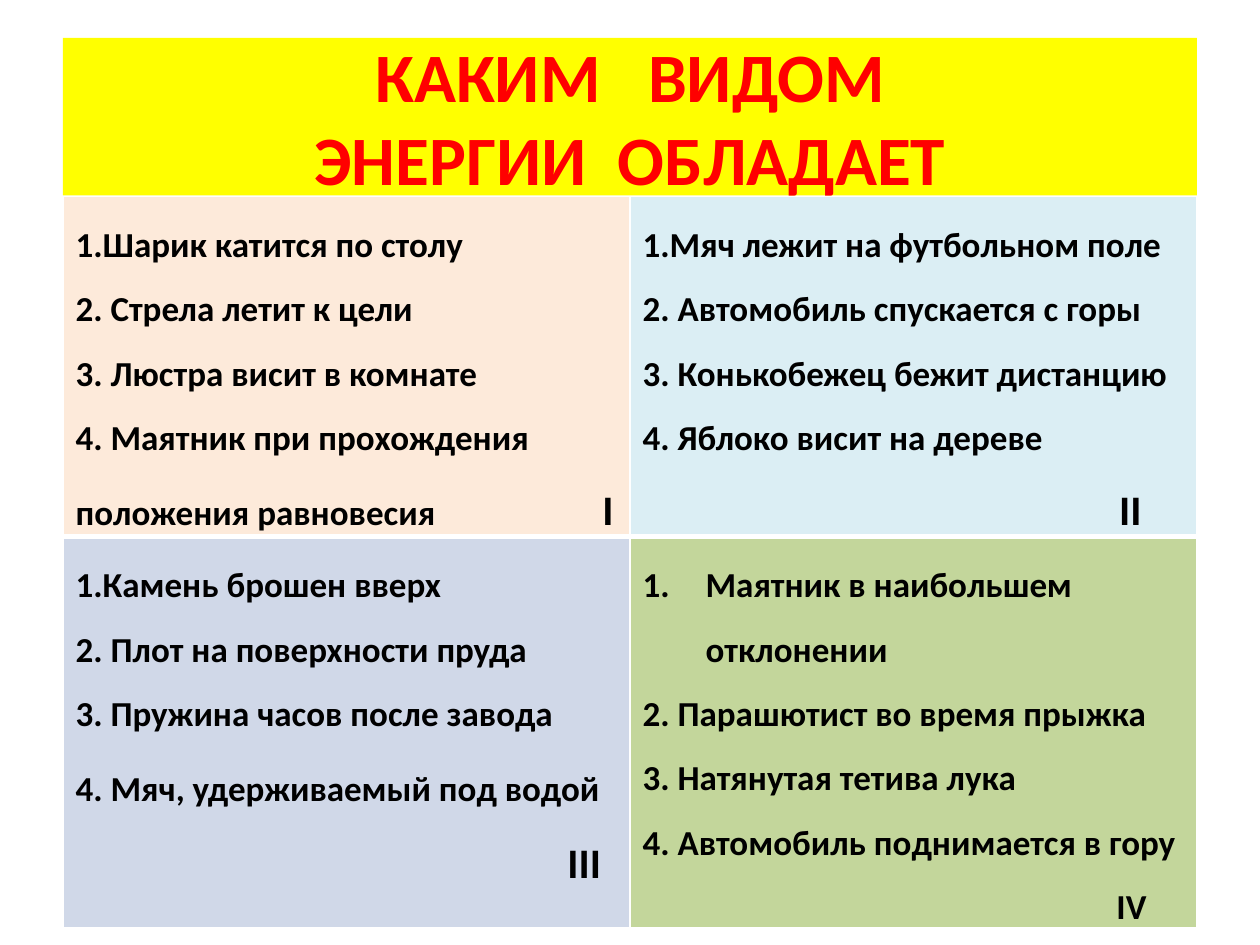
from lxml.etree import SubElement
from pptx import Presentation
from pptx.dml.color import RGBColor
from pptx.enum.text import MSO_ANCHOR, PP_ALIGN
from pptx.oxml import parse_xml
from pptx.oxml.ns import nsdecls, qn
from pptx.util import Inches, Pt

COLORS = {
    "title_fill": "FFFF00", "title": "FF0000", "text": "000000", "border": "FFFFFF",
    "I": "FDEADA", "II": "DBEEF4", "III": "D0D8E8", "IV": "C3D69B",
}


def add_run(p, text, size=20, color="text", spacing=0):
    r = p.add_run()
    r.text = text
    r.font.name = "Calibri"
    r.font.size = Pt(size)
    r.font.bold = True
    r.font.color.rgb = RGBColor.from_string(COLORS[color])
    if spacing:
        r._r.get_or_add_rPr().set("spc", str(spacing * 100))


prs = Presentation()
prs.slide_width, prs.slide_height = Inches(10), Inches(7.5)
W, H = prs.slide_width, prs.slide_height
slide = prs.slides.add_slide(prs.slide_layouts[6])
left, width = int(W * 0.05), int(W * 0.9)

sp = slide.shapes.add_textbox(left, int(H * 0.04), width, int(H * 0.1667))
sp.fill.solid()
sp.fill.fore_color.rgb = RGBColor.from_string(COLORS["title_fill"])
tf = sp.text_frame
tf.word_wrap = True
tf.vertical_anchor = MSO_ANCHOR.MIDDLE
for i, (first, second, gap) in enumerate([("КАКИМ", "ВИДОМ", 18), ("ЭНЕРГИИ", "ОБЛАДАЕТ", 9)]):
    p = tf.add_paragraph() if i else tf.paragraphs[0]
    p.alignment = PP_ALIGN.CENTER
    for text, spacing in [(first, 0), (" ", gap), (second, 0)]:
        add_run(p, text, size=39.6, color="title", spacing=spacing)

groups = [
    ("I", 24, 4.27, ["1.Шарик катится по столу", "2. Стрела летит к цели",
                     "3. Люстра висит в комнате",
                     "4. Маятник при прохождения положения равновесия"]),
    ("II", 24, 3.96, ["1.Мяч лежит на футбольном поле", "2. Автомобиль спускается с горы",
                      "3. Конькобежец бежит дистанцию", "4. Яблоко висит на дереве", ""]),
    ("III", 24, 4.17, ["1.Камень брошен вверх", "2. Плот на поверхности пруда",
                       "3. Пружина часов после завода", "4. Мяч, удерживаемый под водой", ""]),
    ("IV", 20, 4.0, ["Маятник в наибольшем", "отклонении", "2. Парашютист во время прыжка",
                     "3. Натянутая тетива лука", "4. Автомобиль поднимается в гору", ""]),
]

table = slide.shapes.add_table(2, 2, left, int(H * 0.208), width, int(H * 0.74)).table
table.first_row = table.horz_banding = False
for row, share in zip(table.rows, (0.343, 0.396)):
    row.height = int(H * share)

for i, (numeral, size, tab, lines) in enumerate(groups):
    row, col = divmod(i, 2)
    cell = table.cell(row, col)
    cell.fill.solid()
    cell.fill.fore_color.rgb = RGBColor.from_string(COLORS[numeral])
    tcPr = cell._tc.get_or_add_tcPr()
    thick = "B" if row == 0 else "T"
    for k, side in enumerate("LRTB"):
        points = 3 if side == thick else 1
        tcPr.insert(k, parse_xml(
            f'<a:ln{side} {nsdecls("a")} w="{Pt(points)}"><a:solidFill>'
            f'<a:srgbClr val="{COLORS["border"]}"/></a:solidFill></a:ln{side}>'))
    tf = cell.text_frame
    for j, text in enumerate(lines):
        p = tf.add_paragraph() if j else tf.paragraphs[0]
        p.line_spacing = 1.5
        pPr = p._p.get_or_add_pPr()
        if text:
            add_run(p, text)
        if numeral == "III" and j == 3:
            add_run(p, " ", size=size)
        if numeral == "IV" and j < 2:
            pPr.set("marL", str(Inches(0.5)))
            if j == 0:
                pPr.set("indent", str(-Inches(0.5)))
                SubElement(pPr, qn("a:buFont"), typeface="+mj-lt")
                SubElement(pPr, qn("a:buAutoNum"), type="arabicPeriod")
        if j == len(lines) - 1:
            tabs = SubElement(pPr, qn("a:tabLst"))
            SubElement(tabs, qn("a:tab"), pos=str(Inches(tab)), algn="r")
            add_run(p, "\t" + numeral, size=size)

prs.save("out.pptx")
